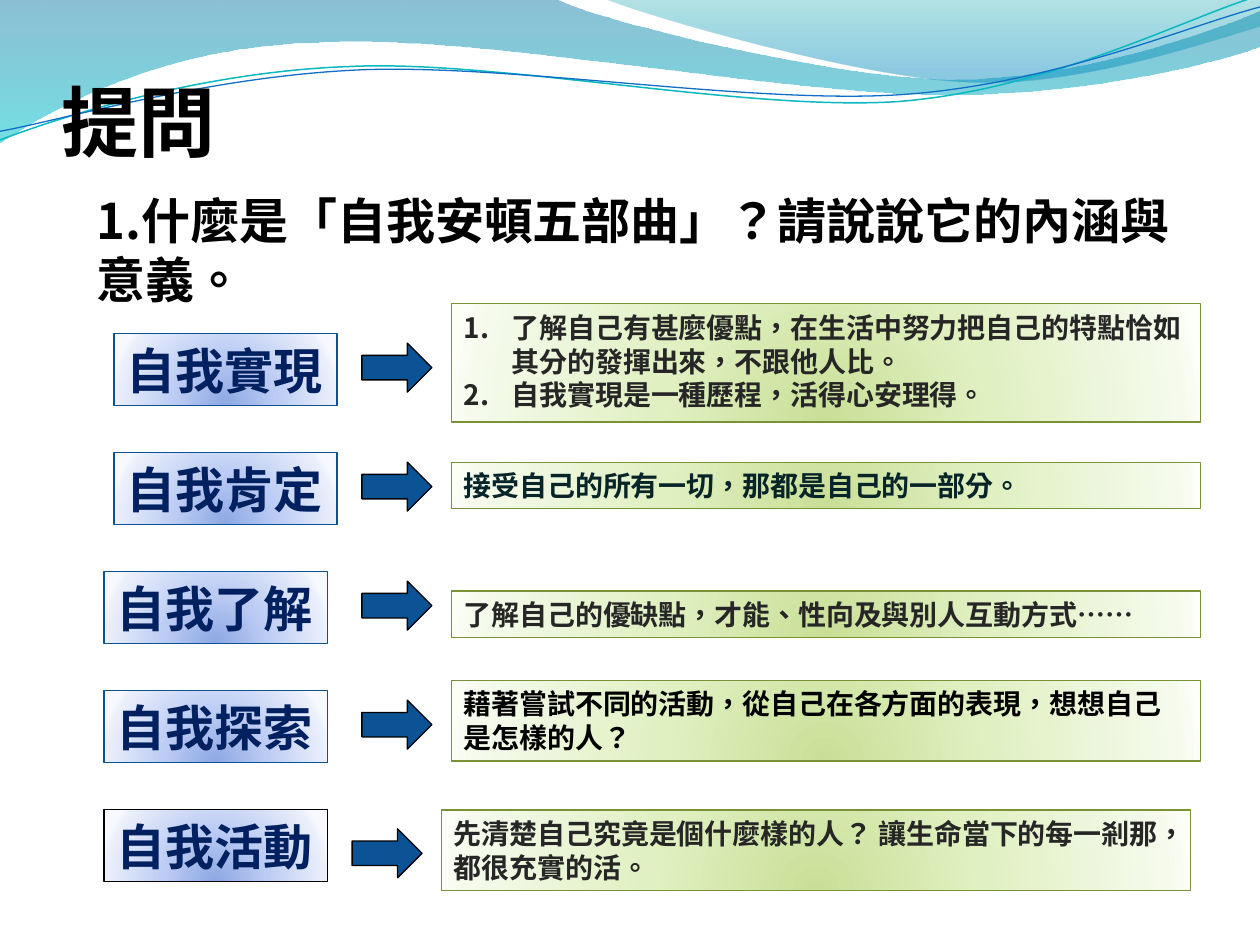
import pptx
import pptx.util
import pptx.dml.color
import pptx.enum.shapes
import pptx.enum.text
import pptx.oxml.ns
from lxml import etree

Pt = pptx.util.Pt
RGBColor = pptx.dml.color.RGBColor
SHAPE = pptx.enum.shapes.MSO_SHAPE
qn = pptx.oxml.ns.qn

FONT = "Noto Sans CJK SC"
LINE_RATIO = 1.21
BLACK = RGBColor(0x00, 0x00, 0x00)
GREY = RGBColor(0x26, 0x26, 0x26)
TEAL_INK = RGBColor(0x07, 0x24, 0x28)
NAVY = RGBColor(0x00, 0x20, 0x60)
BLUE_EDGE = RGBColor(0x09, 0x52, 0x95)
GREEN_EDGE = RGBColor(0x7B, 0x91, 0x35)
ARROW_BLUE = RGBColor(0x0B, 0x53, 0x94)
WAVE_CYAN = RGBColor(0x0A, 0xB8, 0xBF)
WAVE_BLUE = RGBColor(0x0F, 0x6F, 0xC6)

# Gradient stops: position in percent, colour, opacity in percent
BLUE_GLOW = [(0, RGBColor(0x8D, 0xA8, 0xE3), 100), (43, RGBColor(0xBB, 0xCB, 0xF3), 100),
             (93, RGBColor(0xEA, 0xEF, 0xFB), 100), (100, RGBColor(0xF7, 0xF9, 0xFF), 100)]
GREEN_GLOW = [(0, RGBColor(0xC9, 0xDF, 0x97), 100), (43, RGBColor(0xE0, 0xF0, 0xC1), 100),
              (93, RGBColor(0xF5, 0xFA, 0xEC), 100), (100, RGBColor(0xFC, 0xFE, 0xF8), 100)]
WIDE_WAVE = [(0, RGBColor(0x00, 0x74, 0xA1), 45), (100, RGBColor(0x00, 0xC6, 0xCF), 55)]
RIGHT_WAVE = [(0, RGBColor(0x00, 0xA1, 0xA9), 30), (80, RGBColor(0x00, 0x8B, 0xBF), 45)]

# Wave outlines in points: a pair is a straight step, six numbers a Bezier curve
WIDE_OUTLINE = [(0, 0), (317, -1), (343, 12, 478, 45, 546, 45), (614, 45, 690, 19, 720, 6.5),
                (721, 26), (708, 32, 626, 55, 537, 54), (448, 54, 275, 20, 185, 24.5),
                (93, 26, 33, 60, -1, 81.5), (0, 0)]
RIGHT_OUTLINE = [(345, -1), (366, 8, 491, 45, 554, 47), (616, 50, 692, 23, 720, 15),
                 (720, 0), (345, -1)]
CYAN_CURVE = [(0, 80), (34.5, 67, 114, 41, 199.5, 37.5), (284.5, 34, 427, 64, 513.5, 57.5),
              (600, 51, 675.5, 11, 718.5, -1.5)]
BLUE_CURVE = [(0, 75), (34, 69, 118, 44, 204, 40), (290, 36.5, 430, 60.5, 516, 54),
              (602, 48, 677.5, 15, 720, 4.5)]

# Label, label left, label edge, arrow left, arrow drop,
# answer left, top, height, ink and paragraphs
ROWS = [
    ("自我實現", 65.2, BLUE_EDGE, 206.8, 5.5, 257.8, 173.5, 67.7, GREY,
     ["了解自己有甚麼優點，在生活中努力把自己的特點恰如其分的發揮出來，不跟他人比。",
      "自我實現是一種歷程，活得心安理得。"]),
    ("自我肯定", 65.2, BLUE_EDGE, 206.8, 5.5, 257.8, 264.2, 26.6, TEAL_INK,
     ["接受自己的所有一切，那都是自己的一部分。"]),
    ("自我了解", 59.5, BLUE_EDGE, 206.8, 5.5, 257.8, 337.8, 26.6, GREY,
     ["了解自己的優缺點，才能、性向及與別人互動方式……"]),
    ("自我探索", 59.5, BLUE_EDGE, 206.8, 5.5, 257.8, 388.8, 46, BLACK,
     ["藉著嘗試不同的活動，從自己在各方面的表現，想想自己是怎樣的人？"]),
    ("自我活動", 59.5, BLACK, 201.2, 11, 252.2, 462.8, 46, GREY,
     ["先清楚自己究竟是個什麼樣的人？ 讓生命當下的每一剎那，都很充實的活。"]),
]
ROWS_TOP, ROW_PITCH = 190.6, 68


def fill_gradient(shape, stops, glow=False):
    """Linear downward gradient, or a glow rising from below the shape."""
    shape.fill.gradient()
    gradient = shape._element.spPr.find(qn("a:gradFill"))
    for child in list(gradient):
        gradient.remove(child)
    stop_list = etree.SubElement(gradient, qn("a:gsLst"))
    for position, colour, opacity in stops:
        stop = etree.SubElement(stop_list, qn("a:gs"), pos=str(position * 1000))
        tint = etree.SubElement(stop, qn("a:srgbClr"), val=str(colour))
        if opacity < 100:
            etree.SubElement(tint, qn("a:alpha"), val=str(opacity * 1000))
    if glow:
        way = etree.SubElement(gradient, qn("a:path"))
        way.set("path", "circle")
        etree.SubElement(way, qn("a:fillToRect"), l="50000", t="130000", r="50000", b="-30000")
    else:
        etree.SubElement(gradient, qn("a:lin"), ang="5400000", scaled="1")


def write_text(shape, texts, size, colour, wrap=True, numbered=False):
    frame = shape.text_frame
    frame.word_wrap = wrap
    frame.vertical_anchor = pptx.enum.text.MSO_ANCHOR.TOP
    for index, text in enumerate(texts):
        para = frame.paragraphs[0] if index == 0 else frame.add_paragraph()
        para.text = text
        para.alignment = pptx.enum.text.PP_ALIGN.LEFT
        para.line_spacing = Pt(round(size * LINE_RATIO, 1))
        if numbered:
            properties = para._p.get_or_add_pPr()
            properties.set("marL", str(Pt(27.4)))
            properties.set("indent", str(-Pt(27.4)))
            etree.SubElement(properties, qn("a:buAutoNum"), type="arabicPeriod")
        font = para.font
        font.name, font.size, font.bold = FONT, Pt(size), True
        font.color.rgb = colour
        etree.SubElement(font._element, qn("a:ea"), typeface=FONT)
        # Traditional Chinese centres its punctuation
        for span in para.runs:
            span._r.get_or_add_rPr().set("lang", "zh-TW")


def add_box(page, kind, left, top, width, height, edge):
    box = page.shapes.add_shape(kind, Pt(left), Pt(top), Pt(width), Pt(height))
    box.shadow.inherit = False
    box.line.color.rgb = edge
    box.line.width = Pt(0.75)
    return box


def add_wave(page, outline, closed):
    """Lay out all knots as a freeform, then turn each triple into a Bezier curve."""
    knots = [part[at:at + 2] for part in outline[1:] for at in range(0, len(part), 2)]
    builder = page.shapes.build_freeform(*outline[0], scale=float(Pt(1)))
    builder.add_line_segments(knots, close=closed)
    wave = builder.convert_to_shape()
    wave.shadow.inherit = False
    steps = iter(list(wave._element.iter(qn("a:lnTo"))))
    for part in outline[1:]:
        step = next(steps)
        if len(part) == 6:
            curve = etree.Element(qn("a:cubicBezTo"))
            step.addprevious(curve)
            for knot in (step, next(steps), next(steps)):
                curve.append(knot[0])
                knot.getparent().remove(knot)
    return wave


def add_waves(page):
    for outline, stops in ((WIDE_OUTLINE, WIDE_WAVE), (RIGHT_OUTLINE, RIGHT_WAVE)):
        wave = add_wave(page, outline, True)
        fill_gradient(wave, stops)
        wave.line.fill.background()
    for curve, colour, width in ((CYAN_CURVE, WAVE_CYAN, 0.85), (BLUE_CURVE, WAVE_BLUE, 0.75)):
        wave = add_wave(page, curve, False)
        wave.fill.background()
        wave.line.color.rgb = colour
        wave.line.width = Pt(width)


def add_heading(page, text, size, left, top, width, height):
    box = page.shapes.add_textbox(Pt(left), Pt(top), Pt(width), Pt(height))
    write_text(box, [text], size, BLACK)


def add_row(page, top, row):
    (label, label_left, edge, arrow_left, drop,
     answer_left, answer_top, answer_height, ink, answer) = row
    # Step name
    box = add_box(page, SHAPE.RECTANGLE, label_left, top, 127.5, 41, edge)
    fill_gradient(box, BLUE_GLOW, glow=True)
    write_text(box, [label], 28, NAVY, wrap=False)
    # Arrow
    arrow = add_box(page, SHAPE.RIGHT_ARROW, arrow_left, top + drop, 40, 28, BLACK)
    arrow.fill.solid()
    arrow.fill.fore_color.rgb = ARROW_BLUE
    # Answer
    box = add_box(page, SHAPE.RECTANGLE, answer_left, answer_top, 428.3, answer_height, GREEN_EDGE)
    fill_gradient(box, GREEN_GLOW, glow=True)
    write_text(box, answer, 16, ink, numbered=len(answer) > 1)


def main():
    deck = pptx.Presentation()
    deck.slide_width, deck.slide_height = Pt(720), Pt(540)
    page = deck.slides.add_slide(deck.slide_layouts[6])
    add_waves(page)
    add_heading(page, "提問", 44, 28, 38.8, 133, 60.5)
    add_heading(page, "1.什麼是「自我安頓五部曲」？請說說它的內涵與意義。", 28, 48.2, 105, 641, 75)
    for index, row in enumerate(ROWS):
        add_row(page, ROWS_TOP + index * ROW_PITCH, row)
    deck.save("out.pptx")


if __name__ == "__main__":
    main()
